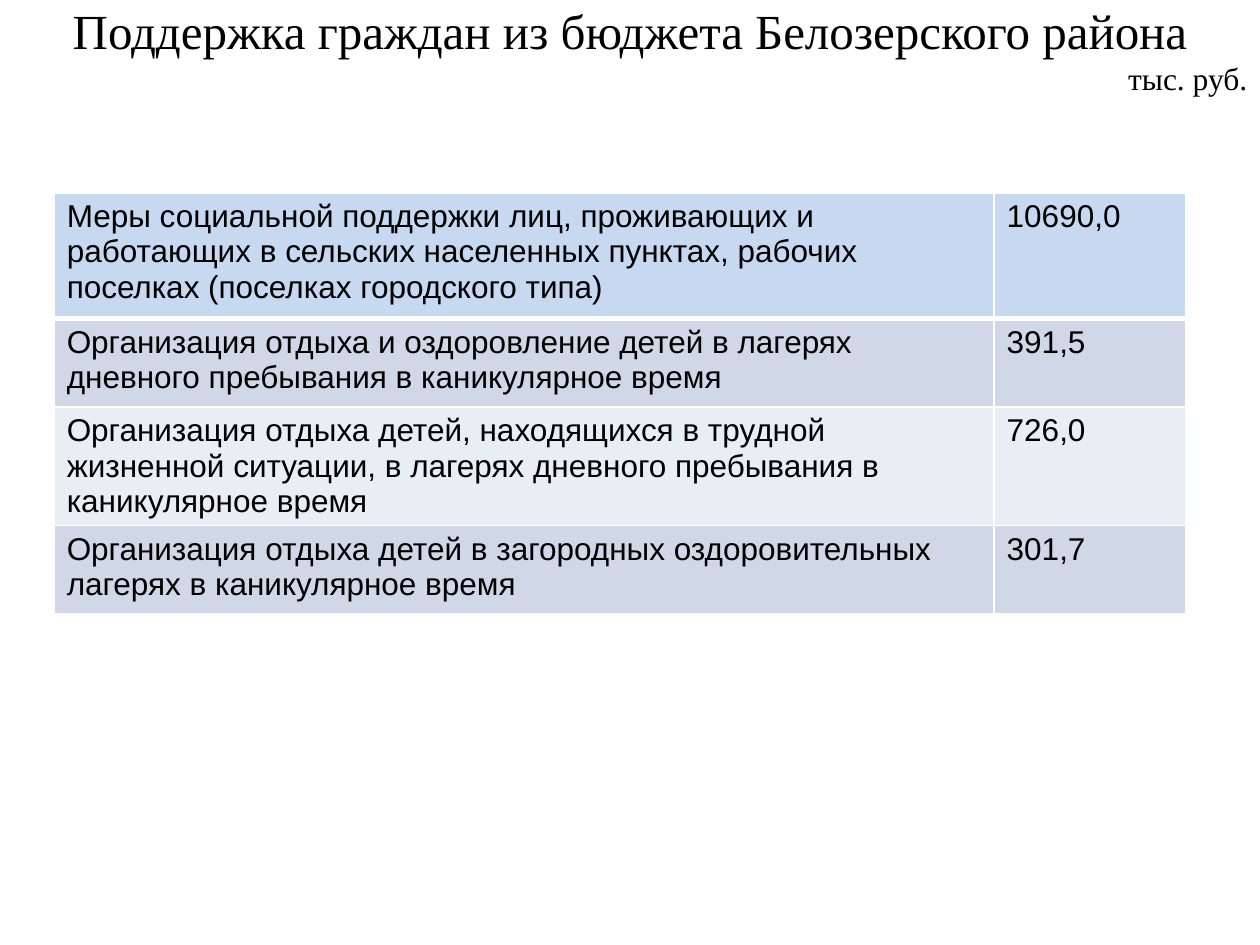
from lxml.etree import SubElement
from pptx import Presentation
from pptx.dml.color import RGBColor
from pptx.enum.text import MSO_ANCHOR, PP_ALIGN
from pptx.oxml.ns import qn
from pptx.util import Inches, Pt

TITLE_LINES = [
    ("Поддержка граждан из бюджета Белозерского района", 28, PP_ALIGN.CENTER),
    ("тыс. руб.", 18, PP_ALIGN.RIGHT),
]
SUPPORT_MEASURES = [
    ("Меры социальной поддержки лиц, проживающих и работающих в сельских "
     "населенных пунктах, рабочих поселках (поселках городского типа)", "10690,0"),
    ("Организация отдыха и оздоровление детей в лагерях дневного пребывания "
     "в каникулярное время", "391,5"),
    ("Организация отдыха детей, находящихся в трудной жизненной ситуации, "
     "в лагерях дневного пребывания в каникулярное время", "726,0"),
    ("Организация отдыха детей в загородных оздоровительных лагерях "
     "в каникулярное время", "301,7"),
]


def color(value):
    return RGBColor.from_string(value)


class SlideBuilder:
    title_font = "Times New Roman"
    table_font = "Arial"
    text_color = "000000"
    border_color = "FFFFFF"
    first_fill = "C6D9F1"
    band_fills = ("E9EDF4", "D0D8E8")

    def __init__(self, slide):
        self.slide = slide

    def run(self, paragraph, text, font, size):
        run = paragraph.add_run()
        run.text = text
        run.font.name = font
        run.font.size = Pt(size)
        run.font.bold = False
        run.font.color.rgb = color(self.text_color)

    def title(self, lines, left, top, width, height):
        title = self.slide.shapes.title
        title.left, title.top = Inches(left), Inches(top)
        title.width, title.height = Inches(width), Inches(height)
        frame = title.text_frame
        frame.word_wrap = True
        frame.vertical_anchor = MSO_ANCHOR.TOP
        frame.margin_top = frame.margin_bottom = 0
        for index, (text, size, alignment) in enumerate(lines):
            paragraph = frame.add_paragraph() if index else frame.paragraphs[0]
            paragraph.alignment = alignment
            self.run(paragraph, text, self.title_font, size)

    def borders(self, cell, bottom_width, top_width):
        properties = cell._tc.get_or_add_tcPr()
        widths = {"a:lnL": 1, "a:lnR": 1, "a:lnT": top_width, "a:lnB": bottom_width}
        for position, (side, width) in enumerate(widths.items()):
            line = SubElement(properties, qn(side), w=str(Pt(width)))
            fill = SubElement(line, qn("a:solidFill"))
            SubElement(fill, qn("a:srgbClr"), val=self.border_color)
            properties.insert(position, line)

    def table(self, records, left, top, widths, heights):
        table = self.slide.shapes.add_table(
            len(records), len(widths), Inches(left), Inches(top),
            Inches(sum(widths)), Inches(sum(heights))).table
        for column, width in zip(table.columns, widths):
            column.width = Inches(width)
        for index, (record, height) in enumerate(zip(records, heights)):
            table.rows[index].height = Inches(height)
            fill = self.band_fills[index % 2] if index else self.first_fill
            for column, text in enumerate(record):
                cell = table.cell(index, column)
                cell.fill.solid()
                cell.fill.fore_color.rgb = color(fill)
                self.borders(cell, 1 if index else 3, 3 if index == 1 else 1)
                self.run(cell.text_frame.paragraphs[0], text, self.table_font, 18)


def main():
    deck = Presentation()
    deck.slide_width, deck.slide_height = Inches(10), Inches(7.5)
    builder = SlideBuilder(deck.slides.add_slide(deck.slide_layouts[5]))
    builder.title(TITLE_LINES, 0, 0, 10, 0.99)
    builder.table(SUPPORT_MEASURES, 0.43, 1.53, [7.46, 1.52], [1, 0.7, 0.7, 0.7])
    deck.save("out.pptx")


if __name__ == "__main__":
    main()
